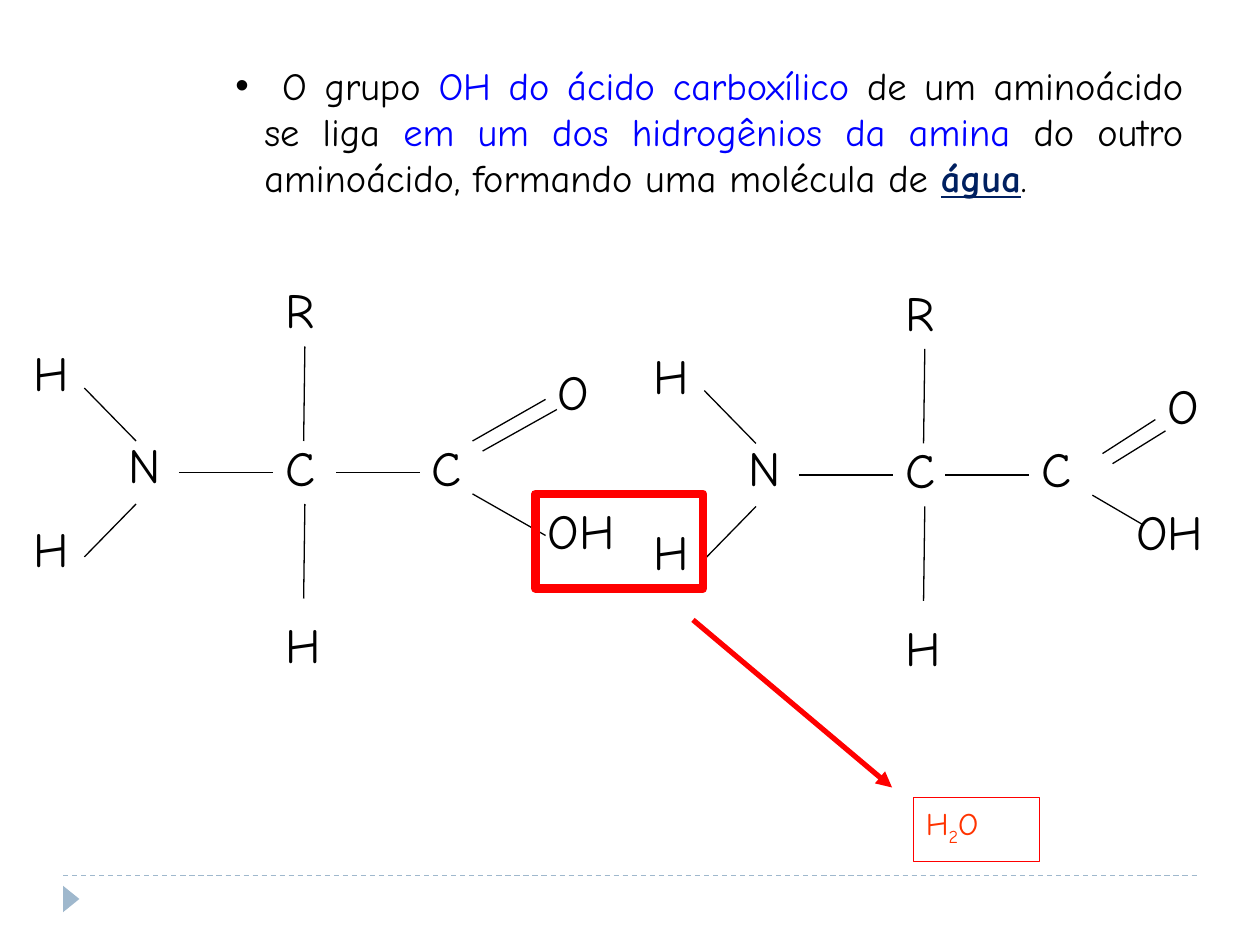
from lxml import etree
from pptx import Presentation
from pptx import util as u
from pptx.dml.color import RGBColor
from pptx.enum import dml, shapes, text
from pptx.oxml import ns

FONT = "Comic Neue"
BLACK, RED, BLUE, NAVY, STEEL = "000000", "FF0000", "0000FF", "002060", "9FB8CD"

CORE = [("N", 0.92, 3.4), ("C", 2.17, 3.42), ("R", 2.17, 2.17),
        ("H", 2.17, 4.83), ("H", 0.17, 2.67), ("H", 0.17, 4.07)]
BONDS = [(1.42, 3.75, 2.17, 3.75), (2.41, 3.5, 2.42, 2.75), (2.41, 4.75, 2.42, 4),
         (0.67, 3.08, 1.08, 3.5), (0.67, 4.42, 1.08, 4)]
LEFT_ACID = [("C", 3.33, 3.42), ("O", 4.33, 2.82), ("OH", 4.25, 3.92)]
LEFT_BONDS = [(2.67, 3.75, 3.33, 3.75), (3.75, 3.5, 4.33, 3.17),
              (3.83, 3.58, 4.42, 3.25), (3.75, 3.92, 4.33, 4.25)]
RIGHT_ACID = [("C", 8.17, 3.43), ("O", 9.17, 2.93), ("OH", 8.92, 3.93)]
RIGHT_BONDS = [(7.5, 3.77, 8.17, 3.77), (8.75, 3.6, 9.17, 3.33),
               (8.83, 3.68, 9.25, 3.42), (8.67, 3.93, 9.08, 4.17)]


def color(code):
    """Turn a hex string into a colour."""
    return RGBColor.from_string(code)


def add_run(para, words, size, code, bold=False, base=None):
    """Add one run; bold runs are underlined too."""
    run = para.add_run()
    run.text = words
    font = run.font
    font.name, font.size, font.color.rgb = FONT, u.Pt(size), color(code)
    if bold:
        font.bold = font.underline = True
    if base:
        run.font._element.set("baseline", str(base))


def add_text(slide, left, top, width, height):
    """Add a wrapping text box and return its paragraph."""
    box = slide.shapes.add_textbox(*map(u.Inches, (left, top, width, height)))
    box.text_frame.word_wrap = True
    return box.text_frame.paragraphs[0]


def add_atom(slide, name, left, top):
    """Add the symbol of an atom or group."""
    width = 0.58 if len(name) == 1 else 0.95
    add_run(add_text(slide, left, top, width, 0.57), name, 28, BLACK)


def add_line(slide, ends, code=BLACK, width=0.75):
    """Add a straight line without a shadow."""
    line = slide.shapes.add_connector(shapes.MSO_CONNECTOR.STRAIGHT, *map(u.Inches, ends))
    line.line.color.rgb, line.line.width = color(code), u.Pt(width)
    etree.SubElement(line._element.spPr, ns.qn("a:effectLst"))
    return line


def add_shape(slide, kind, at, fill=None, edge=None, width=0.75):
    """Add a preset shape with an optional fill and outline."""
    shape = slide.shapes.add_shape(kind, *map(u.Inches, at))
    shape.shadow.inherit = False
    if fill:
        shape.fill.solid()
        shape.fill.fore_color.rgb = color(fill)
    else:
        shape.fill.background()
    if edge:
        shape.line.color.rgb, shape.line.width = color(edge), u.Pt(width)
    else:
        shape.line.fill.background()
    return shape


def add_parts(slide, atoms, bonds, dx=0, dy=0):
    """Draw atoms and bonds, moved by an offset."""
    for name, left, top in atoms:
        add_atom(slide, name, left + dx, top + dy)
    for x1, y1, x2, y2 in bonds:
        add_line(slide, (x1 + dx, y1 + dy, x2 + dx, y2 + dy))


def add_footer(slide):
    """Draw the dashed rule and the small marker."""
    rule = add_line(slide, (0.5, 6.95, 9.5, 6.95), STEEL)
    rule.line.dash_style = dml.MSO_LINE.DASH
    mark = add_shape(slide, shapes.MSO_SHAPE.ISOSCELES_TRIANGLE, (0.46, 7.07, 0.21, 0.13), STEEL)
    mark.rotation = 90


def add_water(slide):
    """Frame the leaving groups and point to the water."""
    rect = shapes.MSO_SHAPE.RECTANGLE
    add_shape(slide, rect, (4.25, 3.92, 1.33, 0.75), edge=RED, width=5)
    label = add_shape(slide, rect, (7.25, 6.33, 1, 0.51), edge=RED)
    label.text_frame.vertical_anchor = text.MSO_ANCHOR.TOP
    para = label.text_frame.paragraphs[0]
    para.alignment = text.PP_ALIGN.LEFT
    for words, base in (("H", None), ("2", -25000), ("O", None)):
        add_run(para, words, 18, "FF3300", base=base)
    arrow = add_line(slide, (5.5, 4.92, 7.08, 6.25), RED, 3)
    etree.SubElement(arrow.line._get_or_add_ln(), ns.qn("a:tailEnd"), type="triangle")


def add_intro(slide):
    """Add the justified bullet paragraph."""
    para = add_text(slide, 1.77, 0.44, 7.72, 1.21)
    para.alignment = text.PP_ALIGN.JUSTIFY
    props = para._p.get_or_add_pPr()
    props.set("marL", str(u.Inches(0.23)))
    props.set("indent", str(-u.Inches(0.23)))
    etree.SubElement(props, ns.qn("a:buFont"), typeface="Arial")
    etree.SubElement(props, ns.qn("a:buChar"), char="•")
    for words, code in ((" O grupo ", BLACK), ("OH do ácido carboxílico ", BLUE),
                        ("de um aminoácido se liga ", BLACK),
                        ("em um dos hidrogênios da amina ", BLUE),
                        ("do outro aminoácido, formando uma molécula de ", BLACK),
                        ("água", NAVY), (".", BLACK)):
        add_run(para, words, 22, code, bold=code == NAVY)


def main():
    """Build and save the slide."""
    deck = Presentation()
    deck.slide_width, deck.slide_height = u.Inches(10), u.Inches(7.5)
    slide = deck.slides.add_slide(deck.slide_layouts[6])
    add_footer(slide)
    add_parts(slide, CORE, BONDS)
    add_parts(slide, LEFT_ACID, LEFT_BONDS)
    add_parts(slide, CORE, BONDS, 4.92, 0.02)
    add_parts(slide, RIGHT_ACID, RIGHT_BONDS)
    add_water(slide)
    add_intro(slide)
    deck.save("out.pptx")


if __name__ == "__main__":
    main()
